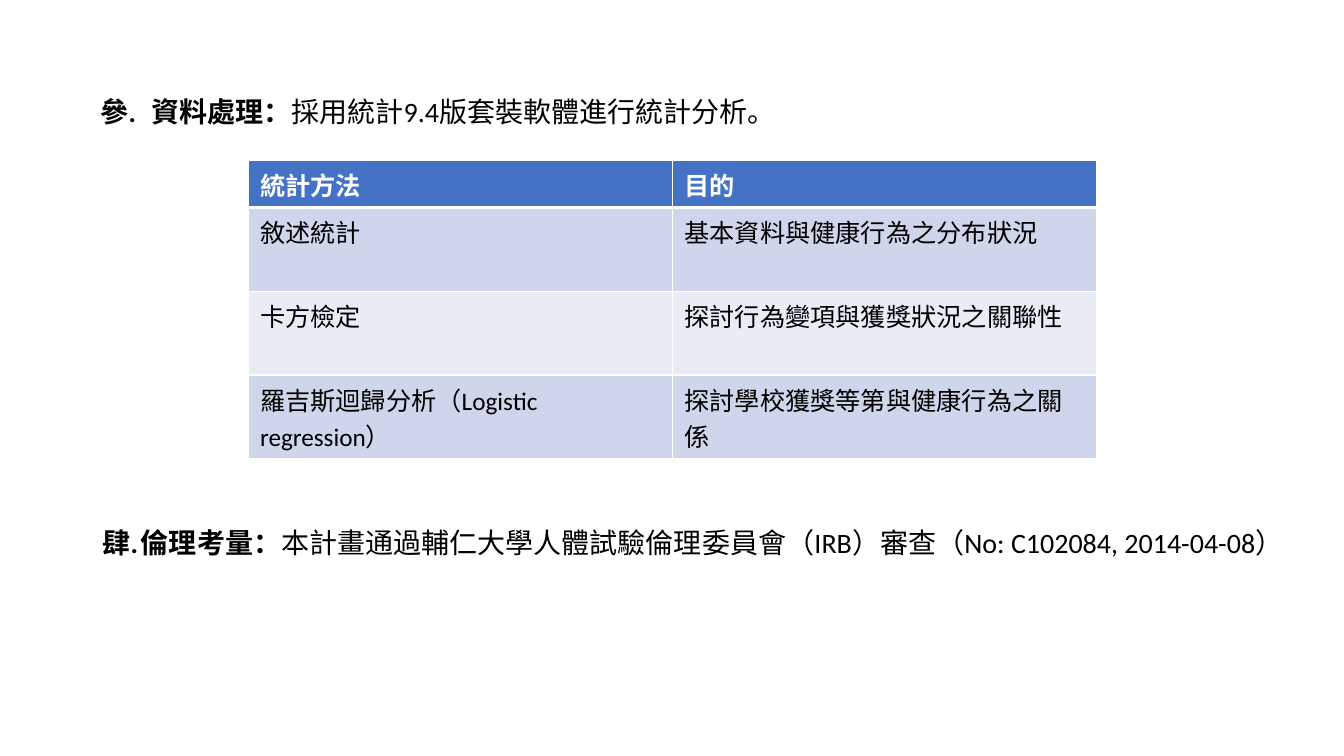
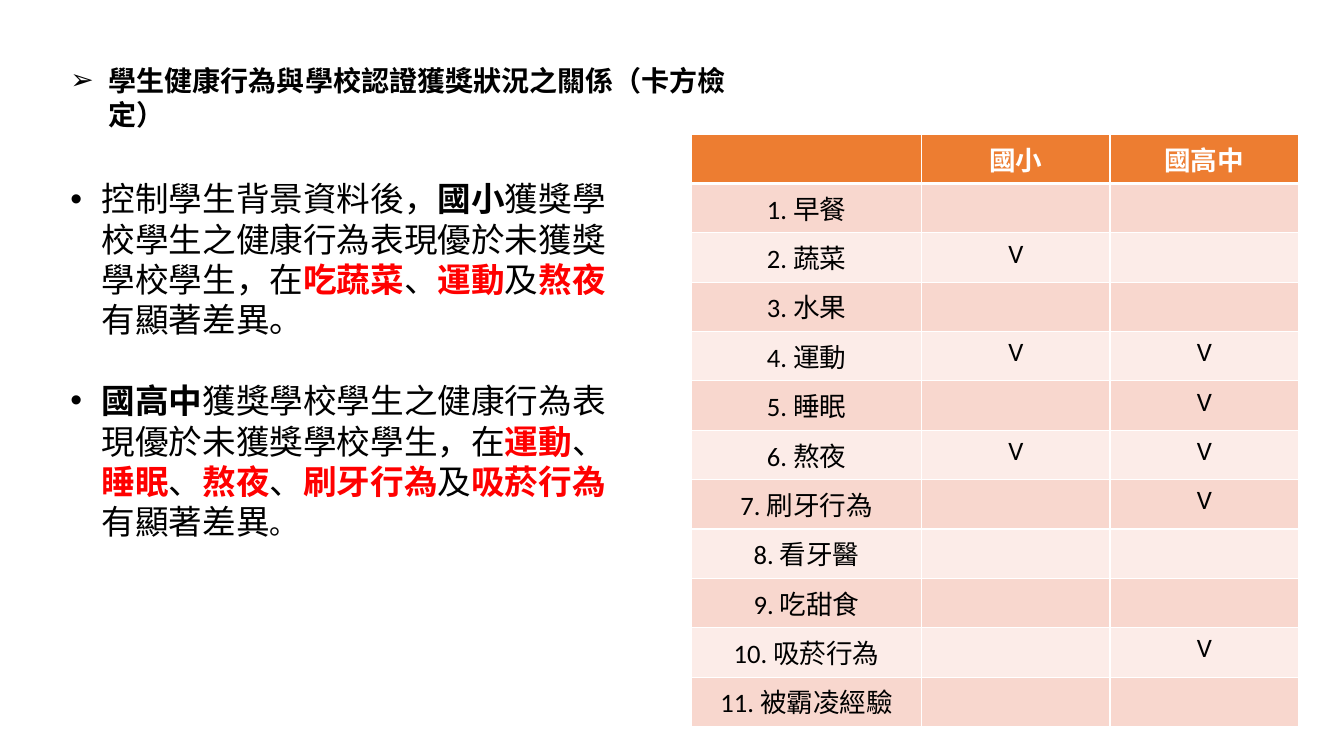
from lxml import etree
from pptx import Presentation
from pptx.dml.color import RGBColor
from pptx.enum.text import MSO_ANCHOR, MSO_AUTO_SIZE, PP_ALIGN
from pptx.oxml.ns import qn
from pptx.util import Inches, Pt

FONT = "Calibri"
BLACK, WHITE, RED = "000000", "FFFFFF", "FF0000"
BLUE_BANDS = ("4472C4", "CFD5EA", "E9EBF5")
ORANGE_BANDS = ("ED7D31", "F8D7CE", "FCECE8")
STYLES = {"plain": (False, BLACK), "bold": (True, BLACK), "key": (True, RED)}

DATA_HEADING = [("資料處理：", "bold"), ("採用統計9.4版套裝軟體進行統計分析。", "plain")]
ETHICS_HEADING = [
    ("倫理考量：", "bold"),
    ("本計畫通過輔仁大學人體試驗倫理委員會（IRB）審查（No: C102084, 2014-04-08）", "plain"),
]
METHODS = [
    ("統計方法", "目的"),
    ("敘述統計", "基本資料與健康行為之分布狀況"),
    ("卡方檢定", "探討行為變項與獲獎狀況之關聯性"),
    ("羅吉斯迴歸分析（Logistic regression）", "探討學校獲獎等第與健康行為之關係"),
]
RELATION_HEADING = [("學生健康行為與學校認證獲獎狀況之關係（卡方檢定）", "bold")]
BEHAVIOURS = ["早餐", "蔬菜", "水果", "運動", "睡眠", "熬夜", "刷牙行為",
              "看牙醫", "吃甜食", "吸菸行為", "被霸凌經驗"]
ELEMENTARY = {"蔬菜", "運動", "熬夜"}
SECONDARY = {"運動", "睡眠", "熬夜", "刷牙行為", "吸菸行為"}
FINDINGS = [
    [("控制學生背景資料後，", "plain"), ("國小", "bold"),
     ("獲獎學校學生之健康行為表現優於未獲獎學校學生，在", "plain"),
     ("吃蔬菜", "key"), ("、", "plain"), ("運動", "key"), ("及", "plain"),
     ("熬夜", "key"), ("有顯著差異。", "plain")],
    [("國高中", "bold"), ("獲獎學校學生之健康行為表現優於未獲獎學校學生，在", "plain"),
     ("運動", "key"), ("、", "plain"), ("睡眠", "key"), ("、", "plain"),
     ("熬夜", "key"), ("、", "plain"), ("刷牙行為", "key"), ("及", "plain"),
     ("吸菸行為", "key"), ("有顯著差異", "plain"), ("。", "plain", 20)],
]


def colour(value):
    return RGBColor.from_string(value)


def format_font(font, size, bold, value):
    font.name = FONT
    font.size = Pt(size)
    font.bold = bold
    font.color.rgb = colour(value)


def set_bullet(paragraph, indent, bullet):
    properties = paragraph._p.get_or_add_pPr()
    properties.set("marL", str(Inches(indent)))
    properties.set("indent", str(-Inches(indent)))
    if isinstance(bullet, int):
        etree.SubElement(properties, qn("a:buAutoNum"), type="ea1ChtPeriod", startAt=str(bullet))
    else:
        etree.SubElement(properties, qn("a:buFont"), typeface="Arial")
        etree.SubElement(properties, qn("a:buChar"), char=bullet)


def add_text(slide, box, paragraphs, size, indent, bullet, gap=0):
    frame = slide.shapes.add_textbox(*map(Inches, box)).text_frame
    frame.word_wrap = True
    frame.auto_size = MSO_AUTO_SIZE.SHAPE_TO_FIT_TEXT
    for index, segments in enumerate(paragraphs):
        paragraph = frame.add_paragraph() if index else frame.paragraphs[0]
        set_bullet(paragraph, indent, bullet)
        if index:
            paragraph.space_before = Pt(gap)
        for content, style, *special_size in segments:
            run = paragraph.add_run()
            run.text = content
            format_font(run.font, special_size[0] if special_size else size, *STYLES[style])
            etree.SubElement(run._r.get_or_add_rPr(), qn("a:ea"), typeface=FONT)


def set_borders(cell, header):
    properties = cell._tc.get_or_add_tcPr()
    for side in "LRTB":
        width = 3 if header and side == "B" else 1
        line = etree.SubElement(properties, qn("a:ln" + side), w=str(Pt(width)))
        fill = etree.SubElement(line, qn("a:solidFill"))
        etree.SubElement(fill, qn("a:srgbClr"), val=WHITE)


def add_grid(slide, corner, rows, widths, heights, bands, size, insets,
             align=PP_ALIGN.LEFT, header_anchor=MSO_ANCHOR.TOP):
    extent = (sum(widths), sum(heights))
    table = slide.shapes.add_table(len(rows), len(widths), *map(Inches, corner + extent)).table
    table.first_row = table.horz_banding = False
    for column, width in zip(table.columns, widths):
        column.width = Inches(width)
    for index, (row, values) in enumerate(zip(table.rows, rows)):
        header = index == 0
        row.height = Inches(heights[index])
        band = bands[0] if header else bands[2 - index % 2]
        for cell, value in zip(row.cells, values):
            cell.margin_left = cell.margin_right = Inches(insets[0])
            cell.margin_top = cell.margin_bottom = Inches(insets[1])
            cell.vertical_anchor = header_anchor if header else MSO_ANCHOR.TOP
            set_borders(cell, header)
            cell.fill.solid()
            cell.fill.fore_color.rgb = colour(band)
            if value:
                cell.text_frame.text = value
                paragraph = cell.text_frame.paragraphs[0]
                paragraph.alignment = align
                format_font(paragraph.runs[0].font, size, header, WHITE if header else BLACK)


def build_methods(slide):
    add_text(slide, (0.9, 0.89, 7.65, 0.44), [DATA_HEADING], 20, 0.5, 3)
    add_grid(slide, (2.46, 1.59), METHODS, [4.21] * 2, [0.47] + [0.83] * 3,
             BLUE_BANDS, 18, (0.12, 0.06))
    add_text(slide, (0.92, 5.16, 11.94, 0.44), [ETHICS_HEADING], 20, 0.38, 4)


def build_relation(slide):
    rows = [("", "國小", "國高中")]
    for number, name in enumerate(BEHAVIOURS, 1):
        marks = ["V" if name in group else "" for group in (ELEMENTARY, SECONDARY)]
        rows.append((f"{number}. {name}", *marks))
    add_text(slide, (0.6, 0.58, 7.17, 0.44), [RELATION_HEADING], 20, 0.38, "➢")
    add_grid(slide, (6.86, 1.33), rows, [2.28, 1.87, 1.87], [0.49] * len(rows),
             ORANGE_BANDS, 19, (0.1, 0.05), PP_ALIGN.CENTER, MSO_ANCHOR.MIDDLE)
    add_text(slide, (0.6, 1.72, 5.57, 3.74), FINDINGS, 24, 0.31, "•", gap=29)


def main():
    presentation = Presentation()
    presentation.slide_width = Inches(13.33)
    presentation.slide_height = Inches(7.5)
    for build in (build_methods, build_relation):
        build(presentation.slides.add_slide(presentation.slide_layouts[6]))
    presentation.save("out.pptx")


if __name__ == "__main__":
    main()
